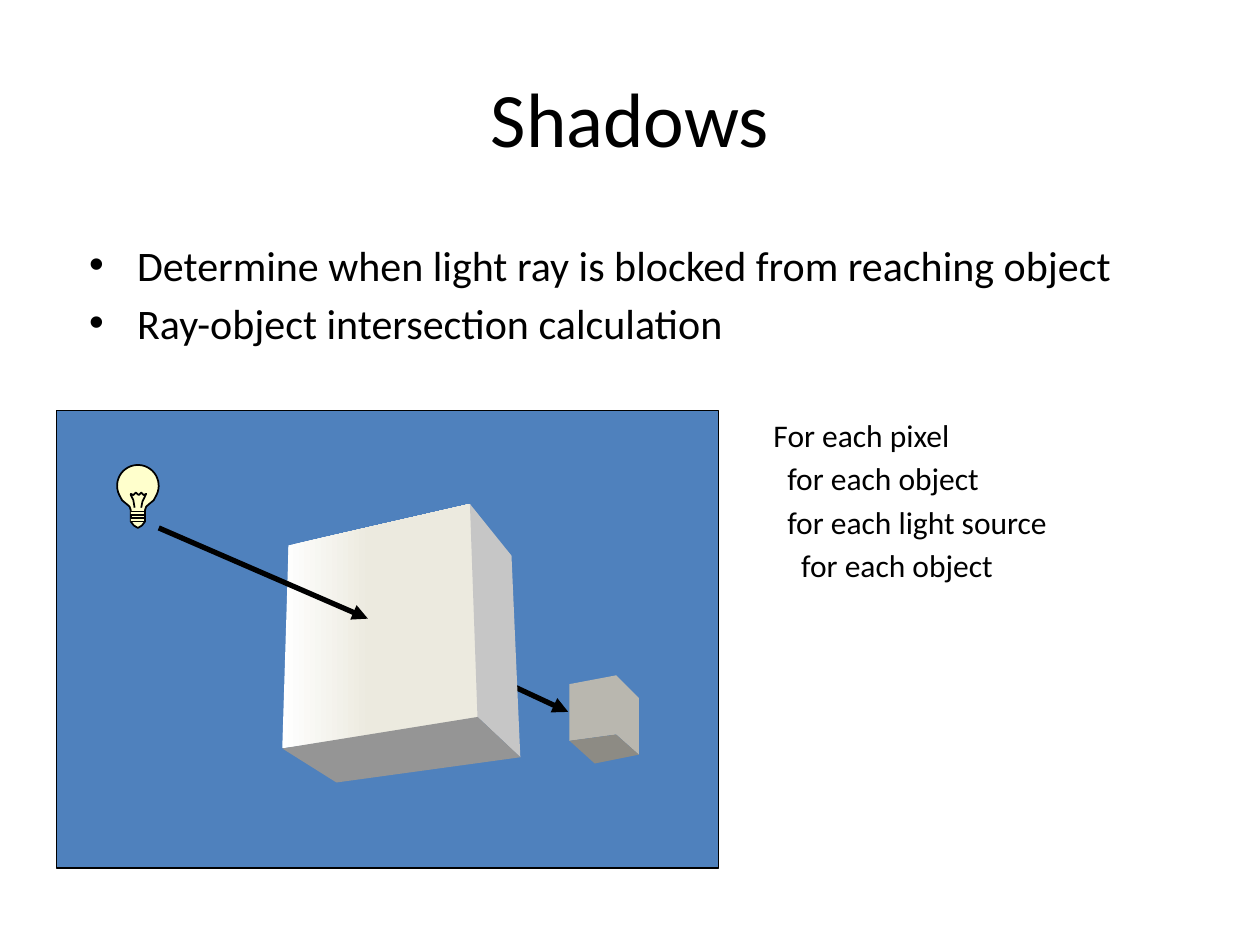
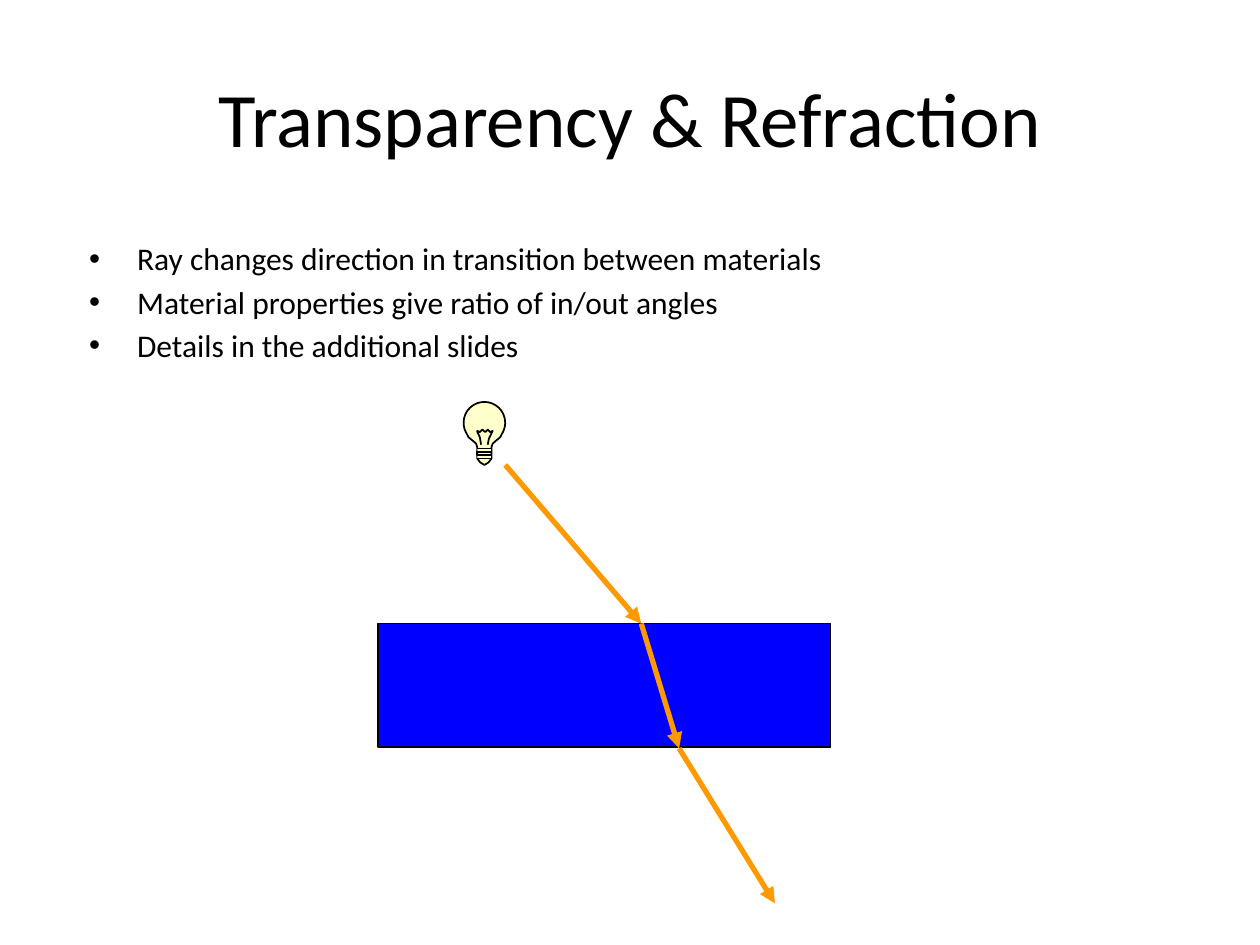
from itertools import pairwise
from math import cos, radians, sin

from lxml import etree
from pptx import Presentation, util as u
from pptx.dml.color import RGBColor
from pptx.enum import shapes, text
from pptx.oxml.ns import qn

BLACK = RGBColor(0x00, 0x00, 0x00)
BACKDROP = RGBColor(0x4F, 0x81, 0xBD)
GLASS = RGBColor(0x00, 0x00, 0xFF)
ORANGE = RGBColor(0xFF, 0x99, 0x00)
BULB_YELLOW = RGBColor(0xFF, 0xFF, 0xCC)
WHITE = RGBColor(0xFF, 0xFF, 0xFF)
IVORY = RGBColor(0xEC, 0xEA, 0xDF)
SIDE_GREY = RGBColor(0xC6, 0xC6, 0xC6)
BASE_GREY = RGBColor(0x95, 0x95, 0x95)
SHADED = RGBColor(0xB9, 0xB7, 0xAF)
SHADED_BASE = RGBColor(0x8D, 0x8B, 0x84)

COLUMNS, ROWS = 100, 75
CELL = u.Inches(10) // COLUMNS
TITLE_BOX = (5, 3, 90, 12.5)
BULLET_BOX = (6.1, 18.5, 87.5, 10.2)
CODE_BOX = (60.4, 32.5, 35.5, 24.2)
SHADOW_BOX = (4.5, 32.6, 52.5, 36.3)
REFRACTION_BOX = (30, 31.9, 35.9, 39.8)
BULB_SIZE = (3.3, 5)
HANGING, CODE_STEP = 3.8, 1.1

NECK = [(0.88, 0.56), (0.7, 0.66), (0.67, 0.72), (0.67, 0.9), (0.6, 0.96), (0.5, 1)]
FILAMENT = [(0.42, 0.68), (0.39, 0.56), (0.33, 0.48), (0.33, 0.46), (0.39, 0.48),
            (0.45, 0.44), (0.52, 0.48), (0.58, 0.44), (0.64, 0.48), (0.7, 0.46),
            (0.61, 0.58), (0.58, 0.68)]
THREADS = [(0.33, 0.74), (0.67, 0.74), (0.67, 0.8), (0.33, 0.8),
           (0.33, 0.84), (0.67, 0.84), (0.67, 0.9), (0.33, 0.9)]
FACES = ("ABCD", "BEFC", "DCFG")


def emu(*cells):
    """Turn grid cells into lengths."""
    return [round(cell * CELL) for cell in cells]


def within(box, points, scale=(1, 1)):
    """Move points, scaled, into the box."""
    return [(box[0] + x * scale[0], box[1] + y * scale[1]) for x, y in points]


def paint(shape, fill, line=None, width=0.75):
    """Give a shape its flat fill and outline."""
    shape.shadow.inherit = False
    shape.fill.solid()
    shape.fill.fore_color.rgb = fill
    if line is None:
        shape.line.fill.background()
    else:
        shape.line.color.rgb = line
        shape.line.width = u.Pt(width)
    return shape


def outline(slide, *strokes, close=True):
    """Draw one freeform from its strokes."""
    builder = None
    for stroke in strokes:
        start, *rest = [emu(*point) for point in stroke]
        if builder is None:
            builder = slide.shapes.build_freeform(*start)
        else:
            builder.move_to(*start)
        builder.add_line_segments(rest, close=close)
    return builder.convert_to_shape()


def rectangle(slide, box, fill):
    """Draw a filled rectangle with a thin black border."""
    kind = shapes.MSO_SHAPE.RECTANGLE
    return paint(slide.shapes.add_shape(kind, *emu(*box)), fill, BLACK)


def ray(slide, start, end, color):
    """Draw a light ray ending in an arrowhead."""
    link = slide.shapes.add_connector(
        shapes.MSO_CONNECTOR.STRAIGHT, *emu(*start), *emu(*end))
    link.line.color.rgb = color
    link.line.width = u.Pt(3)
    etree.SubElement(link.line._get_or_add_ln(), qn("a:tailEnd"), type="triangle")
    etree.SubElement(link._element.spPr, qn("a:effectLst"))


def bulb(slide, corner):
    """Draw the light bulb from its top left corner."""
    globe = [(0.5 + 0.5 * cos(radians(a)), 0.33 + 0.33 * sin(radians(a)))
             for a in range(26, -207, -8)]
    left_neck = [(1 - x, y) for x, y in NECK]
    glass = globe + left_neck + NECK[-2::-1]
    parts = [within(corner, part, BULB_SIZE) for part in (glass, FILAMENT, THREADS)]
    paint(outline(slide, parts[0]), BULB_YELLOW, BLACK, 1)
    paint(outline(slide, *parts[1:], close=False), BULB_YELLOW, BLACK, 1)


def cube(slide, box, corners, colors):
    """Draw the three visible faces of a cube and return the front one."""
    named = dict(zip("ABCDEFG", within(box, corners)))
    faces = [paint(outline(slide, [named[key] for key in face]), color)
             for face, color in zip(FACES, colors)]
    return faces[0]


def light_up(face):
    """Fade a face from white to ivory."""
    face.fill.gradient()
    face.fill.gradient_angle = 0
    for stop, color, position in zip(face.fill.gradient_stops, (WHITE, IVORY), (0, 0.45)):
        stop.color.rgb = color
        stop.position = position


def write(slide, box, lines, size, margins, bullet=False, hanging=0, **formats):
    """Write lines of text, each with its own left margin."""
    frame = slide.shapes.add_textbox(*emu(*box)).text_frame
    frame.word_wrap = True
    frame.vertical_anchor = formats.pop("anchor", text.MSO_ANCHOR.TOP)
    for number, (line, margin) in enumerate(zip(lines, margins)):
        paragraph = frame.paragraphs[0] if number == 0 else frame.add_paragraph()
        paragraph.text = line
        properties = paragraph._p.get_or_add_pPr()
        properties.set("marL", str(emu(margin)[0]))
        properties.set("indent", str(emu(-hanging)[0]))
        if bullet:
            etree.SubElement(properties, qn("a:buFont"), typeface="Arial")
            etree.SubElement(properties, qn("a:buChar"), char="•")
        if number:
            paragraph.space_before = u.Pt(round(size * 0.18, 1))
        for name, value in formats.items():
            setattr(paragraph, name, value)
        for name, value in {"name": "Calibri", "size": u.Pt(size)}.items():
            setattr(paragraph.font, name, value)
        paragraph.font.color.rgb = BLACK


def topic_slide(deck, title, points, size):
    """Add a slide with its title and bullet points."""
    slide = deck.slides.add_slide(deck.slide_layouts[6])
    write(slide, TITLE_BOX, [title], 44, [0],
          anchor=text.MSO_ANCHOR.MIDDLE, alignment=text.PP_ALIGN.CENTER)
    write(slide, BULLET_BOX, points, size, [HANGING] * len(points),
          bullet=True, hanging=HANGING)
    return slide


def shadow_scene(slide, box):
    """Show a cube blocking the light from a smaller one."""
    rectangle(slide, box, BACKDROP)
    lamp, source, hit, target = within(
        box, [(4.8, 4.3), (8.1, 9.3), (24.7, 16.5), (40.6, 23.9)])
    ray(slide, hit, target, BLACK)
    bulb(slide, lamp)
    blocker = [(18.4, 10.7), (32.8, 7.4), (33.4, 24.3), (17.9, 26.8),
               (36.1, 11.5), (36.8, 27.5), (22.2, 29.5)]
    light_up(cube(slide, box, blocker, (IVORY, SIDE_GREY, BASE_GREY)))
    shaded = [(40.7, 21.7), (44.4, 21), (44.4, 25.7), (40.7, 26.2),
              (46.2, 22.8), (46.2, 27.3), (42.7, 28)]
    cube(slide, box, shaded, (SHADED, SHADED, SHADED_BASE))
    ray(slide, source, hit, BLACK)


def refraction_scene(slide, box):
    """Show a ray bending as it passes through a glass slab."""
    lamp, slab, *bends = within(
        box, [(6.8, 0), (0, 17.6), (10.1, 5), (20.9, 17.6), (23.9, 27.5), (31.5, 39.8)])
    bulb(slide, lamp)
    rectangle(slide, (*slab, box[2], 9.8), GLASS)
    for start, end in pairwise(bends):
        ray(slide, start, end, ORANGE)


def main():
    """Build both slides and save the deck."""
    deck = Presentation()
    deck.slide_width, deck.slide_height = emu(COLUMNS, ROWS)

    shadows = topic_slide(deck, "Shadows", [
        "Determine when light ray is blocked from reaching object",
        "Ray-object intersection calculation"], 24)
    shadow_scene(shadows, SHADOW_BOX)
    loops = ["For each pixel", "for each object", "for each light source", "for each object"]
    write(shadows, CODE_BOX, loops, 18, [CODE_STEP * depth for depth in (0, 1, 1, 2)])

    refraction = topic_slide(deck, "Transparency & Refraction", [
        "Ray changes direction in transition between materials",
        "Material properties give ratio of in/out angles",
        "Details in the additional slides"], 18)
    refraction_scene(refraction, REFRACTION_BOX)

    deck.save("out.pptx")


if __name__ == "__main__":
    main()
